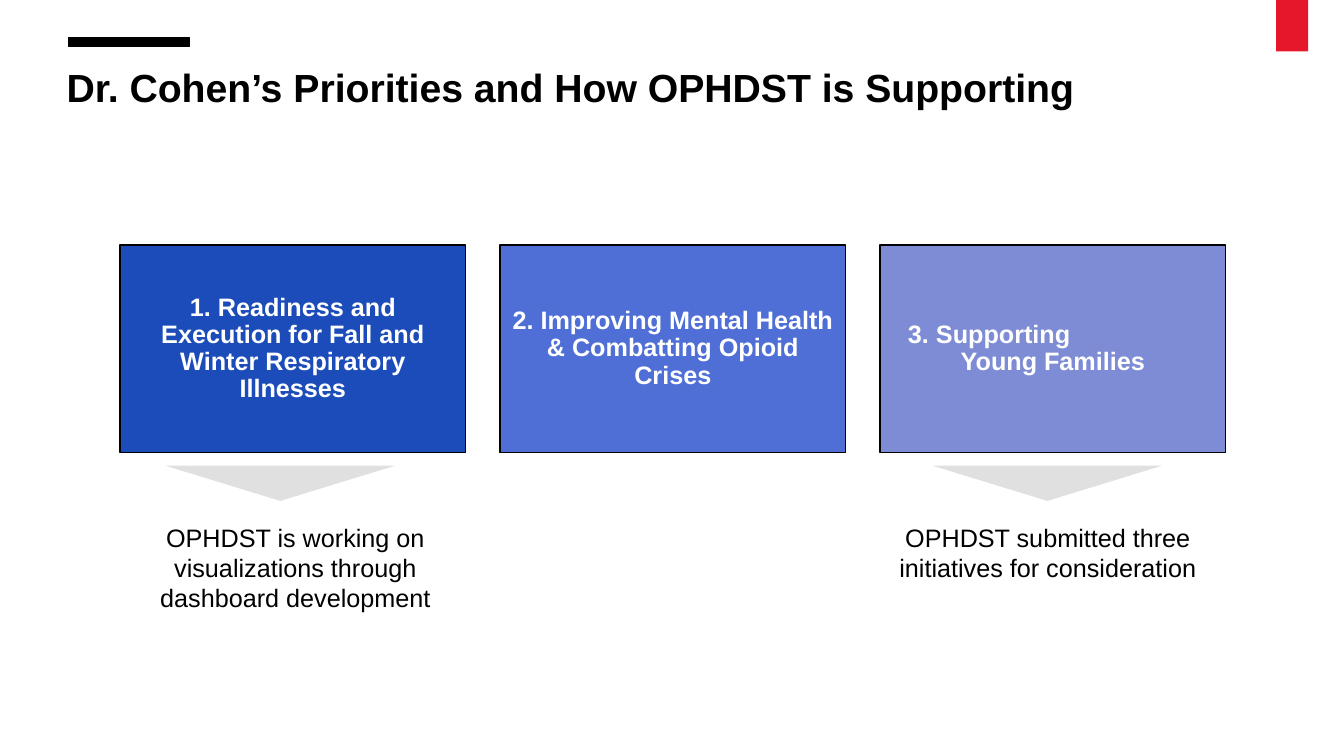
from dataclasses import dataclass

from pptx import Presentation
from pptx.dml.color import RGBColor
from pptx.enum import shapes, text
from pptx.util import Pt

FONT = "Arial"
BLACK, WHITE, RED, GREY = "000000", "FFFFFF", "E6172B", "E0E0E0"
CARD_LEFT, CARD_TOP, CARD_WIDTH, CARD_HEIGHT = 85.7, 175, 247, 148.3
CARD_PITCH = 271.45
CARD_INSET = 5
SPLIT_INDENT = 15


@dataclass
class Priority:
    lines: list[str]
    fill: str


@dataclass
class Support:
    caption: str
    left: float
    width: float
    arrow_left: float


PRIORITIES = [
    Priority(["1. Readiness and Execution for Fall and Winter Respiratory Illnesses"], "1C4CB9"),
    Priority(["2. Improving Mental Health & Combatting Opioid Crises"], "506FD6"),
    Priority(["3. Supporting", "Young Families"], "7D8CD5"),
]
SUPPORTS = [
    Support("OPHDST is working on visualizations through dashboard development", 85, 252, 118.1),
    Support("OPHDST submitted three initiatives for consideration", 622.8, 251.3, 666),
]


def rgb(value: str) -> RGBColor:
    return RGBColor.from_string(value)


def style(paragraph, size: float, color: str, bold: bool = False) -> None:
    paragraph.font.name = FONT
    paragraph.font.size = Pt(size)
    paragraph.font.bold = bold
    paragraph.font.color.rgb = rgb(color)


def add_block(slide, kind, left: float, top: float, width: float, height: float,
              fill: str, outlined: bool = False):
    block = slide.shapes.add_shape(kind, Pt(left), Pt(top), Pt(width), Pt(height))
    block.shadow.inherit = False
    block.fill.solid()
    block.fill.fore_color.rgb = rgb(fill)
    if outlined:
        block.line.color.rgb = rgb(BLACK)
        block.line.width = Pt(1)
    else:
        block.line.fill.background()
    return block


def add_priority(slide, priority: Priority, column: int) -> None:
    card = add_block(slide, shapes.MSO_SHAPE.RECTANGLE, CARD_LEFT + column * CARD_PITCH,
                     CARD_TOP, CARD_WIDTH, CARD_HEIGHT, priority.fill, outlined=True)
    frame = card.text_frame
    frame.word_wrap = True
    frame.vertical_anchor = text.MSO_ANCHOR.MIDDLE
    frame.margin_left = frame.margin_right = Pt(CARD_INSET)
    frame.margin_top = frame.margin_bottom = Pt(CARD_INSET)
    frame.text = "\n".join(priority.lines)
    for paragraph in frame.paragraphs:
        paragraph.alignment = text.PP_ALIGN.CENTER
        paragraph.line_spacing = 0.9
        style(paragraph, 18, WHITE, bold=True)
    if len(priority.lines) > 1:
        opening = frame.paragraphs[0]
        opening.alignment = text.PP_ALIGN.LEFT
        opening._p.get_or_add_pPr().set("marL", str(Pt(SPLIT_INDENT)))


def add_support(slide, support: Support) -> None:
    arrow = add_block(slide, shapes.MSO_SHAPE.ISOSCELES_TRIANGLE,
                      support.arrow_left, 332.6, 164.2, 25.2, GREY)
    arrow.rotation = 180
    caption = slide.shapes.add_textbox(Pt(support.left), Pt(369.4), Pt(support.width), Pt(51))
    frame = caption.text_frame
    frame.word_wrap = True
    frame.auto_size = text.MSO_AUTO_SIZE.SHAPE_TO_FIT_TEXT
    frame.text = support.caption
    frame.paragraphs[0].alignment = text.PP_ALIGN.CENTER
    style(frame.paragraphs[0], 18, BLACK)


def add_title(slide, wording: str) -> None:
    title = slide.shapes.title
    title.left, title.top, title.width, title.height = Pt(40.3), Pt(45.4), Pt(873.4), Pt(54.7)
    frame = title.text_frame
    frame.auto_size = text.MSO_AUTO_SIZE.NONE
    frame.vertical_anchor = text.MSO_ANCHOR.TOP
    frame.text = wording
    heading = frame.paragraphs[0]
    heading.alignment = text.PP_ALIGN.LEFT
    heading.line_spacing = 0.9
    style(heading, 28, BLACK, bold=True)


def main() -> None:
    deck = Presentation()
    deck.slide_width, deck.slide_height = Pt(960), Pt(540)
    slide = deck.slides.add_slide(deck.slide_layouts[5])

    # Title with its accent bars
    add_title(slide, "Dr. Cohen’s Priorities and How OPHDST is Supporting")
    rectangle = shapes.MSO_SHAPE.RECTANGLE
    add_block(slide, rectangle, 911.5, 0, 23, 36.7, RED)
    add_block(slide, rectangle, 49, 26.8, 86.4, 6.4, BLACK, outlined=True)

    # Priority cards
    for column, priority in enumerate(PRIORITIES):
        add_priority(slide, priority, column)

    # Supporting work below the cards
    for support in SUPPORTS:
        add_support(slide, support)

    deck.save("out.pptx")


if __name__ == "__main__":
    main()
